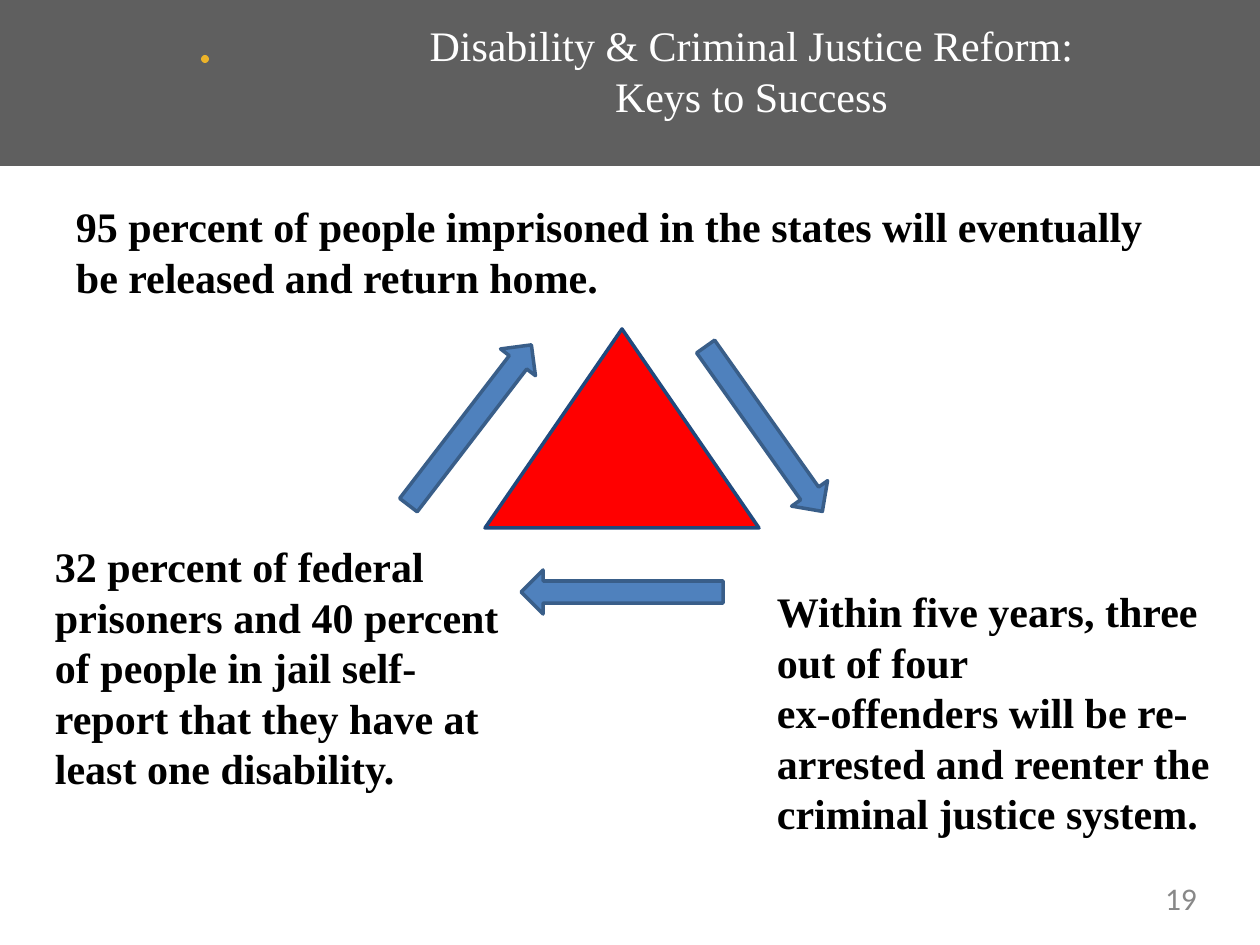
from dataclasses import dataclass
from pptx import Presentation
from pptx.dml.color import RGBColor
from pptx.enum.shapes import MSO_SHAPE
from pptx.enum.text import MSO_ANCHOR, PP_ALIGN
from pptx.util import Emu, Pt


@dataclass(frozen=True)
class Theme:
    band: str = "5F5F5F"
    dot: str = "ECB329"
    peak: str = "FF0000"
    edge: str = "1F497D"
    arrow: str = "4F81BD"
    rim: str = "395E89"
    ink: str = "000000"
    light: str = "FFFFFF"
    mute: str = "888888"
    serif: str = "Times New Roman"
    sans: str = "Calibri"
    main: int = 24
    small: int = 18
    lead: float = 28.8
    stroke: int = 2


THEME = Theme()
WIDTH, HEIGHT = 1260, 945
SCALE = 914400 / 126

TITLE = "Disability & Criminal Justice Reform:\nKeys to Success"
FACTS = [
    ("95 percent of people imprisoned in the states will eventually "
     "be released and return home.", (63, 195, 1134, 38)),
    ("Within five years, three out of four\n"
     "ex-offenders will be re-arrested and reenter the "
     "criminal justice system.", (764, 580, 485, 355)),
    ("32 percent of federal prisoners and 40 percent of people in jail "
     "self-report that they have at least one disability.",
     (42, 535, 479, 304)),
]
PAGE = "19"
ARROW = (202, 44)
TURNS = [(470, 425, 307.5), (764, 429, 54.7), (622, 592, 180)]  # centre, angle


def px(*sizes):
    return [Emu(round(size * SCALE)) for size in sizes]


def add_form(slide, kind, box, fill, line=None, turn=0):
    form = slide.shapes.add_shape(kind, *px(*box))
    form.shadow.inherit = False
    form.fill.solid()
    form.fill.fore_color.rgb = RGBColor.from_string(fill)
    if line:
        form.line.color.rgb = RGBColor.from_string(line)
        form.line.width = Pt(THEME.stroke)
    else:
        form.line.fill.background()
    form.rotation = turn


def add_text(slide, text, box, color, face=THEME.serif, size=THEME.main,
             bold=False, align=PP_ALIGN.LEFT, anchor=MSO_ANCHOR.TOP,
             inset=(13, 6), lead=THEME.lead):
    frame = slide.shapes.add_textbox(*px(*box)).text_frame
    frame.word_wrap = True
    frame.vertical_anchor = anchor
    side, top = px(*inset)
    frame.margin_left = frame.margin_right = side
    frame.margin_top = frame.margin_bottom = top
    para = frame.paragraphs[0]
    para.text = text
    para.alignment = align
    if lead:
        para.line_spacing = Pt(lead)
    for run in para.runs:
        run.font.name = face
        run.font.size = Pt(size)
        run.font.bold = bold
        run.font.color.rgb = RGBColor.from_string(color)


def main():
    deck = Presentation()
    deck.slide_width, deck.slide_height = px(WIDTH, HEIGHT)
    slide = deck.slides.add_slide(deck.slide_layouts[6])

    add_form(slide, MSO_SHAPE.RECTANGLE, (0, 0, WIDTH, 166), THEME.band)
    add_form(slide, MSO_SHAPE.OVAL, (201, 55, 8, 8), THEME.dot)
    for text, box in FACTS:
        add_text(slide, text, box, THEME.ink, bold=True)

    add_form(slide, MSO_SHAPE.ISOSCELES_TRIANGLE, (485, 329, 274, 199),
             THEME.peak, THEME.edge)
    wide, high = ARROW
    for x, y, turn in TURNS:
        add_form(slide, MSO_SHAPE.RIGHT_ARROW,
                 (x - wide / 2, y - high / 2, wide, high),
                 THEME.arrow, THEME.rim, turn)

    add_text(slide, TITLE, (136, 10, 1231, 120), THEME.light,
             align=PP_ALIGN.CENTER, anchor=MSO_ANCHOR.MIDDLE, inset=(13, 13))
    add_text(slide, PAGE, (907, 879, 290, 38), THEME.mute, THEME.sans,
             THEME.small, align=PP_ALIGN.RIGHT, inset=(0, 0), lead=None)
    deck.save("out.pptx")


if __name__ == "__main__":
    main()
